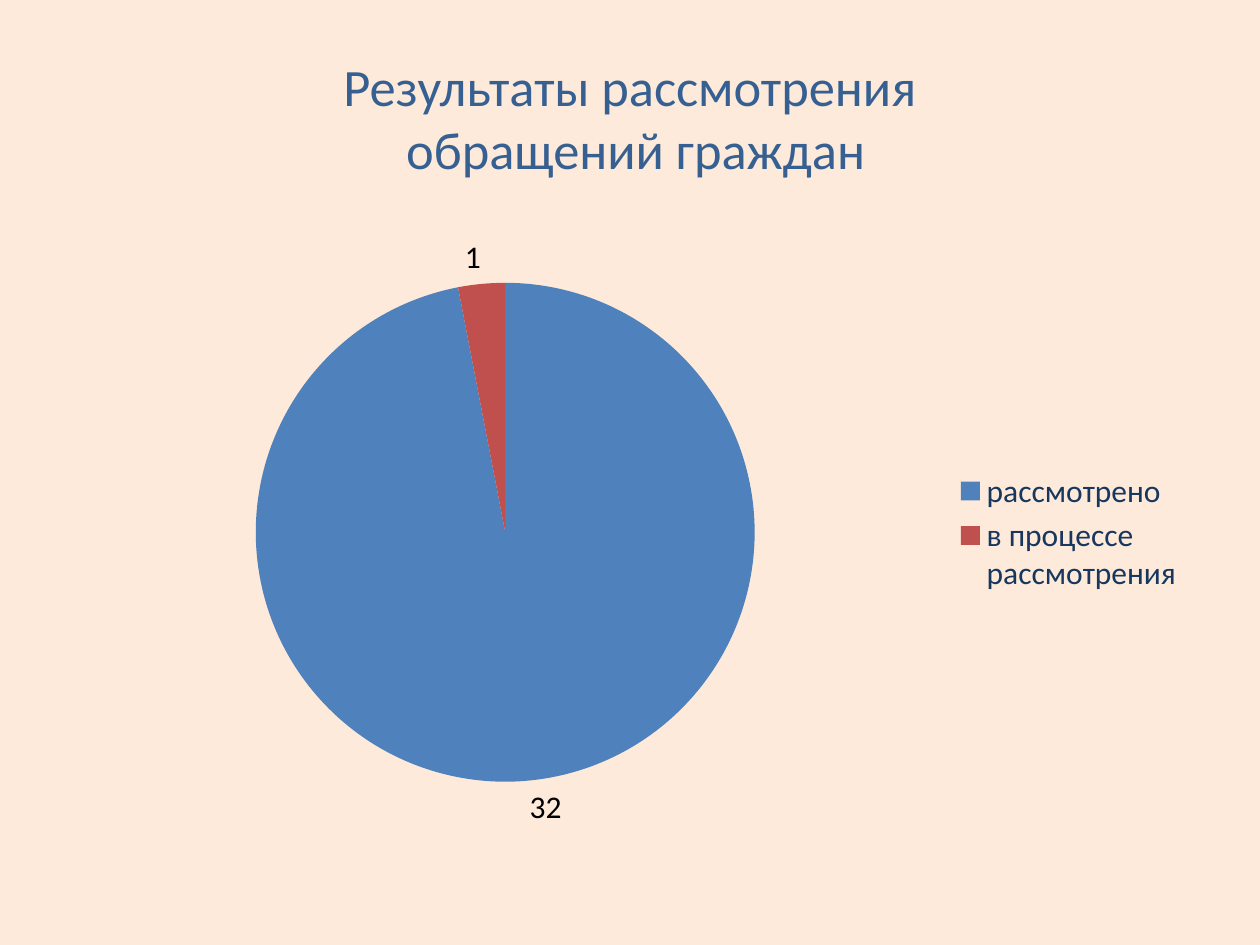
from lxml.etree import SubElement
from pptx import Presentation
from pptx.chart.data import CategoryChartData
from pptx.dml.color import RGBColor
from pptx.enum.chart import XL_CHART_TYPE as ChartType
from pptx.enum.chart import XL_LABEL_POSITION as LabelPos
from pptx.enum.chart import XL_LEGEND_POSITION as LegendPos
from pptx.enum.text import MSO_ANCHOR, PP_ALIGN
from pptx.oxml.ns import qn
from pptx.util import Inches, Pt

FONT = "Calibri"
PEACH = RGBColor(0xFD, 0xEA, 0xDA)
BLUE = RGBColor(0x37, 0x60, 0x92)
NAVY = RGBColor(0x17, 0x37, 0x5E)
BLACK = RGBColor(0, 0, 0)
RESULTS = [
    ("рассмотрено", 32, RGBColor(0x4F, 0x81, 0xBD)),
    ("в процессе рассмотрения", 1, RGBColor(0xC0, 0x50, 0x4D)),
]
PIE_AREA = {"x": 0.17, "y": 0.1, "w": 0.44, "h": 0.8}


def set_font(font, size, color):
    """Apply the slide's typeface with a size and colour."""
    font.name, font.size, font.color.rgb = FONT, Pt(size), color


def place_title(slide, box):
    """Fill and format the title placeholder inside the box."""
    sp = slide.shapes.title
    sp.left, sp.top, sp.width, sp.height = box
    tf = sp.text_frame
    tf.vertical_anchor = MSO_ANCHOR.MIDDLE
    p = tf.paragraphs[0]
    p.text = "Результаты рассмотрения\v обращений граждан"
    p.alignment = PP_ALIGN.CENTER
    set_font(p.font, 30, BLUE)


def set_plot_area(chart, area):
    """Fix the inner plot area as shares of the chart's size."""
    plot_area = chart._chartSpace.chart.plotArea
    layout = plot_area.find(qn("c:layout"))
    if layout is None:
        layout = SubElement(plot_area, qn("c:layout"))
        plot_area.insert(0, layout)
    manual = SubElement(layout, qn("c:manualLayout"))
    SubElement(manual, qn("c:layoutTarget")).set("val", "inner")
    for key in "xy":
        SubElement(manual, qn(f"c:{key}Mode")).set("val", "edge")
    for key, share in area.items():
        SubElement(manual, qn(f"c:{key}")).set("val", str(share))


def place_pie(slide, box):
    """Add the pie of results with its labels and legend inside the box."""
    data = CategoryChartData()
    data.categories = [name for name, _, _ in RESULTS]
    data.add_series("Series 1", [count for _, count, _ in RESULTS])
    chart = slide.shapes.add_chart(ChartType.PIE, *box, data).chart
    chart.has_title = False
    set_font(chart.font, 18, BLACK)
    set_plot_area(chart, PIE_AREA)

    chart.has_legend = True
    chart.legend.position = LegendPos.RIGHT
    chart.legend.include_in_layout = False
    set_font(chart.legend.font, 18, NAVY)

    plot = chart.plots[0]
    plot.vary_by_categories = True
    for i, (_, _, color) in enumerate(RESULTS):
        fill = plot.series[0].points[i].format.fill
        fill.solid()
        fill.fore_color.rgb = color
    labels = plot.series[0].data_labels
    labels.show_value = True
    labels.position = LabelPos.OUTSIDE_END
    set_font(labels.font, 18, BLACK)


def main():
    """Build the slide and save it."""
    prs = Presentation()
    prs.slide_width, prs.slide_height = Inches(10), Inches(7.5)
    w, h = prs.slide_width, prs.slide_height
    slide = prs.slides.add_slide(prs.slide_layouts[5])
    bg = slide.background.fill
    bg.solid()
    bg.fore_color.rgb = PEACH
    left, width = int(w * 0.05), int(w * 0.9)
    place_title(slide, (left, int(h * 0.04), width, Inches(1.25)))
    place_pie(slide, (left, Inches(1.75), width, int(h * 0.66)))
    prs.save("out.pptx")


if __name__ == "__main__":
    main()
